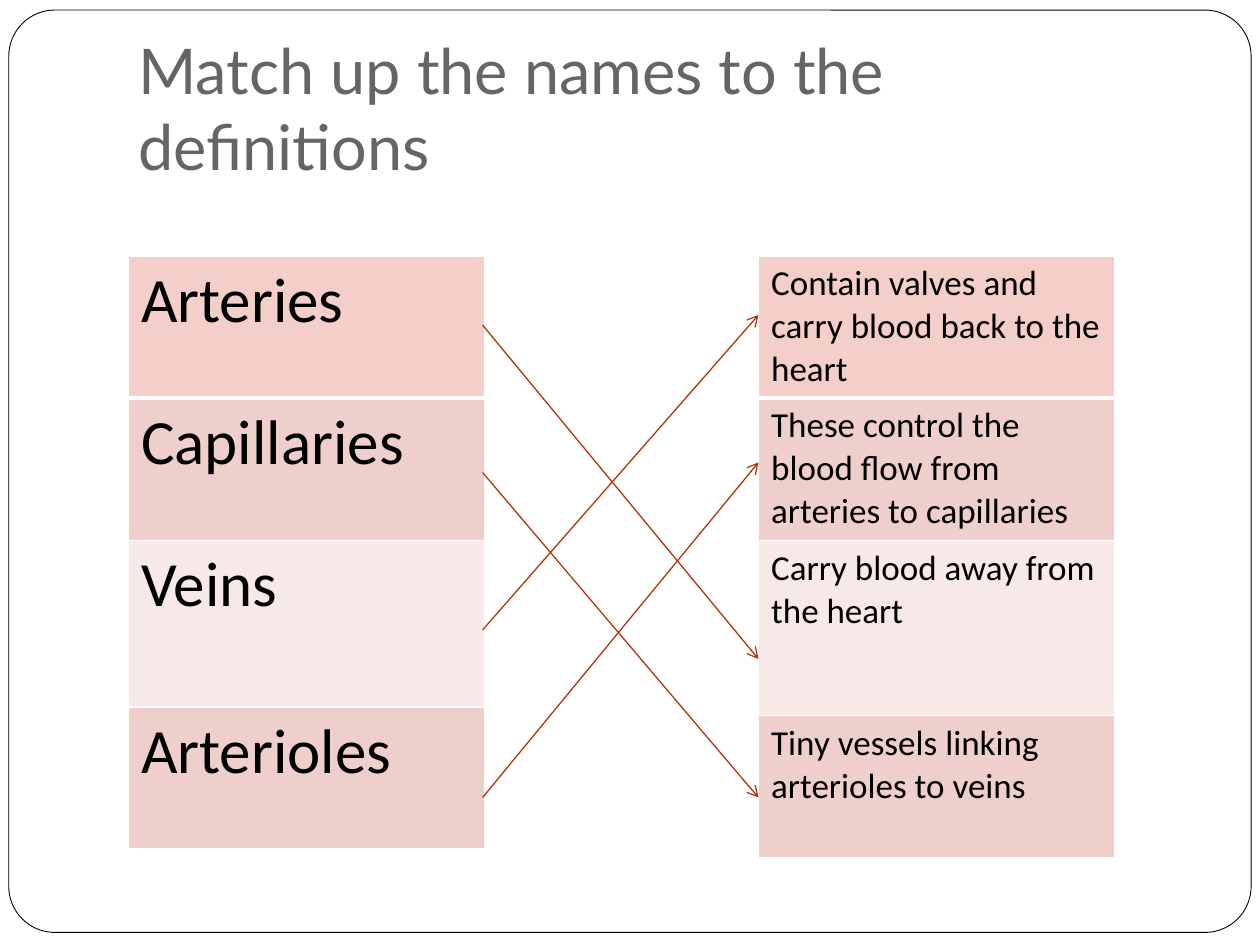
from lxml import etree
from pptx import Presentation
from pptx.dml.color import RGBColor
from pptx.enum.shapes import MSO_CONNECTOR, MSO_SHAPE
from pptx.enum.text import MSO_ANCHOR
from pptx.oxml.ns import qn
from pptx.util import Inches, Pt

STRAIGHT = MSO_CONNECTOR.STRAIGHT
ROUNDED = MSO_SHAPE.ROUNDED_RECTANGLE
BOTTOM = MSO_ANCHOR.BOTTOM

NAMES = ["Arteries", "Capillaries", "Veins", "Arterioles"]
DEFINITIONS = [
    "Contain valves and carry blood back to the heart",
    "These control the blood flow from arteries to capillaries",
    "Carry blood away from the heart",
    "Tiny vessels linking arterioles to veins",
]
ROW_FILLS = ["F4CEC9", "EFCFCC", "F7E9E8", "EFCFCC"]
ROW_HEIGHT = 1.13
# Start and end heights of each name-to-definition arrow
MATCHES = [(2.58, 5.23), (3.75, 6.33), (5, 2.5), (6.33, 3.67)]


def color(value):
    return RGBColor.from_string(value)


def write(frame, text, font="Calibri", size=20, ink="000000"):
    frame.word_wrap = True
    span = frame.paragraphs[0].add_run()
    span.text = text
    span.font.name = font
    span.font.size = Pt(size)
    span.font.color.rgb = color(ink)


def set_borders(cell, **widths):
    """Give the cell white borders; widths in points by side (L, R, T, B)."""
    properties = cell._tc.get_or_add_tcPr()
    for index, (side, width) in enumerate(widths.items()):
        line = etree.Element(qn(f"a:ln{side}"), w=str(Pt(width)))
        fill = etree.SubElement(line, qn("a:solidFill"))
        etree.SubElement(fill, qn("a:srgbClr"), val="FFFFFF")
        properties.insert(index, line)


class SlideBuilder:
    paper = "FFFFFF"
    title_ink = "696464"
    arrow_ink = "B1360B"

    def __init__(self, page):
        self.page = page

    def frame(self, left, top, width, height):
        shape = self.page.shapes.add_shape(
            ROUNDED, Inches(left), Inches(top), Inches(width), Inches(height))
        shape.adjustments[0] = 0.05
        shape.shadow.inherit = False
        shape.fill.solid()
        shape.fill.fore_color.rgb = color(self.paper)
        shape.line.color.rgb = color("000000")
        shape.line.width = Pt(0.5)

    def title(self, text, left, top, width, height):
        box = self.page.shapes.add_textbox(
            Inches(left), Inches(top), Inches(width), Inches(height))
        box.text_frame.vertical_anchor = BOTTOM
        box.text_frame.margin_bottom = Inches(0.1)
        write(box.text_frame, text, font="Lato", size=36, ink=self.title_ink)

    def column(self, texts, left, top, width, heights, size):
        """Add a one-column table of tinted cells."""
        table = self.page.shapes.add_table(
            len(texts), 1, Inches(left), Inches(top),
            Inches(width), Inches(sum(heights))).table
        table.first_row = table.horz_banding = False
        for index, (text, height) in enumerate(zip(texts, heights)):
            table.rows[index].height = Inches(height)
            cell = table.cell(index, 0)
            cell.fill.solid()
            cell.fill.fore_color.rgb = color(ROW_FILLS[index])
            set_borders(cell, L=1, R=1, T=3 if index == 1 else 1,
                        B=3 if index == 0 else 1)
            write(cell.text_frame, text, size=size)

    def arrow(self, x1, y1, x2, y2):
        line = self.page.shapes.add_connector(
            STRAIGHT, Inches(x1), Inches(y1), Inches(x2), Inches(y2))
        line.line.color.rgb = color(self.arrow_ink)
        line.line.width = Pt(0.75)
        etree.SubElement(line.line._get_or_add_ln(), qn("a:tailEnd"), type="arrow")
        etree.SubElement(line._element.spPr, qn("a:effectLst"))


def main():
    deck = Presentation()
    deck.slide_width, deck.slide_height = Inches(10), Inches(7.5)
    builder = SlideBuilder(deck.slides.add_slide(deck.slide_layouts[6]))

    builder.frame(0.07, 0.08, 9.86, 7.32)
    builder.title("Match up the names to the definitions", 1, 0.3, 8.5, 1.25)
    for texts, left, third_height, size in [
            (NAMES, 1.02, 1.32, 36), (DEFINITIONS, 6.02, 1.39, 20)]:
        heights = [ROW_HEIGHT, ROW_HEIGHT, third_height, ROW_HEIGHT]
        builder.column(texts, left, 2.03, 2.83, heights, size)
    for start, end in MATCHES:
        builder.arrow(3.83, start, 6.02, end)

    deck.save("out.pptx")


if __name__ == "__main__":
    main()
